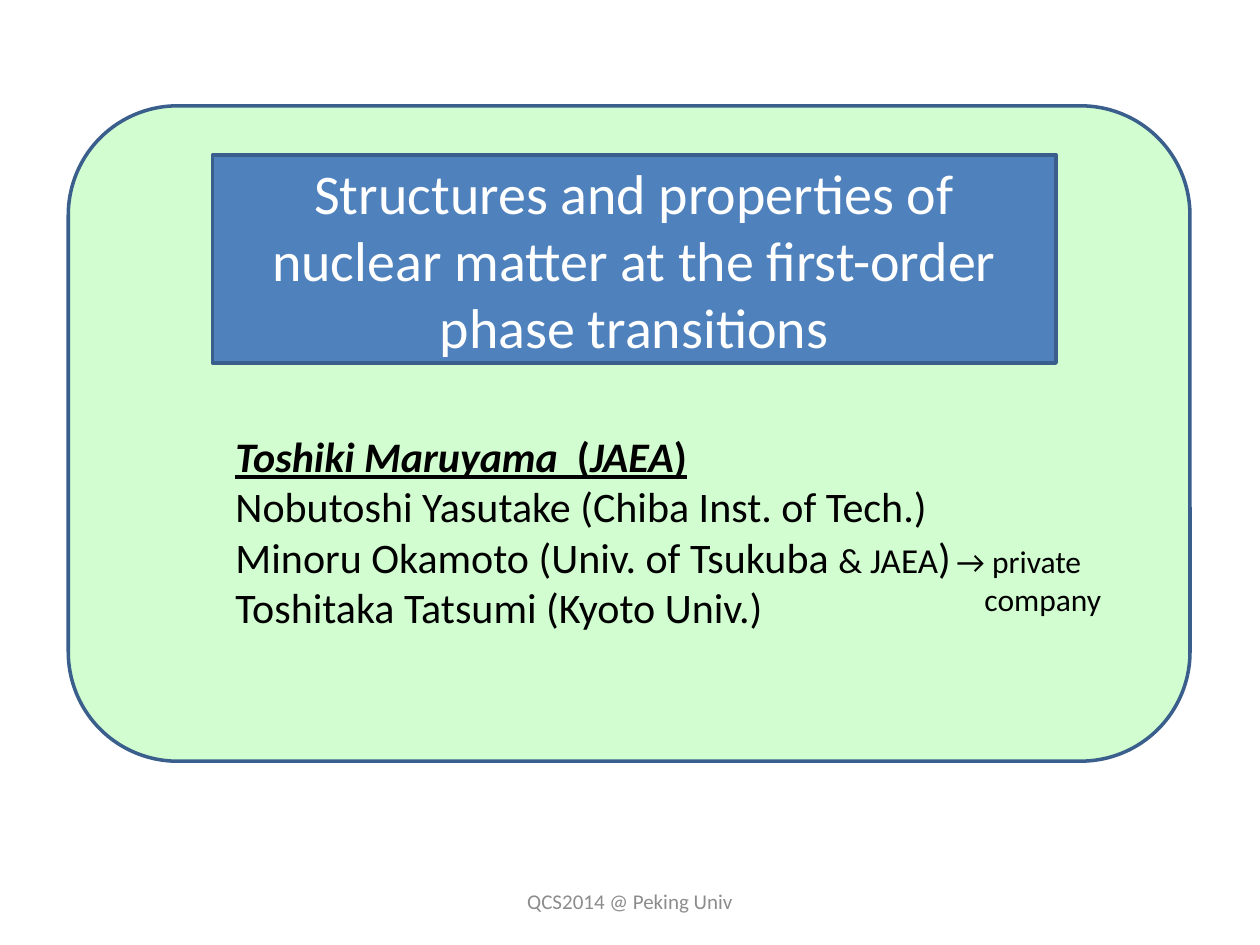
from dataclasses import dataclass
from lxml import etree
from pptx import Presentation
from pptx.dml.color import RGBColor
from pptx.enum import shapes, text
from pptx.oxml import ns
from pptx.util import Pt

COLORS = {"panel": "21F616", "outline": "3A5F8C", "title": "4F81BD",
          "white": "FFFFFF", "black": "000000", "footer": "8C8C8C"}
FONT = "Calibri"


@dataclass
class Box:
    left: float
    top: float
    width: float
    height: float

    def lengths(self) -> list:
        return [Pt(n) for n in (self.left, self.top, self.width, self.height)]


@dataclass
class Run:
    words: str
    size: float | None = None
    italic: bool | None = None


@dataclass
class Line:
    runs: list[Run]
    indent: float = 0
    lead: bool = False


def paint(shape, fill: str) -> None:
    shape.fill.solid()
    shape.fill.fore_color.rgb = RGBColor.from_string(COLORS[fill])
    shape.line.color.rgb = RGBColor.from_string(COLORS["outline"])
    shape.line.width = Pt(2)


def format_font(font, size: float, color: str) -> None:
    font.name, font.size = FONT, Pt(size)
    font.color.rgb = RGBColor.from_string(COLORS[color])


def add_lines(slide, box: Box, lines: list[Line], size: float, color: str = "black",
              wrap: bool = False, align=text.PP_ALIGN.LEFT, anchor=text.MSO_ANCHOR.TOP) -> None:
    frame = slide.shapes.add_textbox(*box.lengths()).text_frame
    frame.word_wrap, frame.vertical_anchor = wrap, anchor
    for index, line in enumerate(lines):
        paragraph = frame.add_paragraph() if index else frame.paragraphs[0]
        paragraph.alignment = align
        format_font(paragraph.font, size, color)
        if line.indent:
            paragraph._p.get_or_add_pPr().set("marL", str(Pt(line.indent)))
        for part in line.runs:
            run = paragraph.add_run()
            run.text = part.words
            format_font(run.font, part.size or size, color)
            run.font.italic = part.italic
            if line.lead:
                run.font.bold = run.font.underline = True


def add_panel(slide, box: Box) -> None:
    panel = slide.shapes.add_shape(shapes.MSO_SHAPE.ROUNDED_RECTANGLE, *box.lengths())
    panel.shadow.inherit = False
    paint(panel, "panel")
    color = panel._element.spPr.find(".//" + ns.qn("a:srgbClr"))
    etree.SubElement(color, ns.qn("a:alpha"), val="20000")


def format_title(slide, box: Box, words: str) -> None:
    title = slide.shapes.title
    title.left, title.top, title.width, title.height = box.lengths()
    # Rounded outline for the placeholder
    geometry = etree.SubElement(title._element.spPr, ns.qn("a:prstGeom"), prst="roundRect")
    etree.SubElement(geometry, ns.qn("a:avLst"))
    paint(title, "title")
    frame = title.text_frame
    frame.text = words
    frame.auto_size = text.MSO_AUTO_SIZE.NONE
    frame.word_wrap, frame.vertical_anchor = True, text.MSO_ANCHOR.MIDDLE
    frame.paragraphs[0].alignment = text.PP_ALIGN.CENTER
    format_font(frame.paragraphs[0].font, 32, "white")
    # Bring the title in front of the panel
    slide.shapes._spTree.append(title._element)


def main() -> None:
    presentation = Presentation()
    presentation.slide_width, presentation.slide_height = Pt(720), Pt(540)
    slide = presentation.slides.add_slide(presentation.slide_layouts[5])

    # Panel and title
    add_panel(slide, Box(39, 60.5, 641, 374.5))
    format_title(slide, Box(121.5, 88.5, 482, 119),
                 "Structures and properties of nuclear matter at the first-order phase transitions")

    # Authors
    add_lines(slide, Box(127.5, 242.5, 432, 123), [
        Line([Run("Toshiki Maruyama  ", italic=True), Run("("),
              Run("JAEA", italic=True), Run(")")], lead=True),
        Line([Run("Nobutoshi Yasutake (Chiba Inst. of Tech.)")]),
        Line([Run("Minoru Okamoto (Univ. of Tsukuba "), Run("& JAEA", size=20), Run(")")]),
        Line([Run("Toshitaka Tatsumi (Kyoto Univ.)")]),
    ], size=24)

    # Footer
    add_lines(slide, Box(246, 500.5, 228, 29), [Line([Run("QCS2014 @ Peking Univ")])],
              size=12, color="footer", wrap=True,
              align=text.PP_ALIGN.CENTER, anchor=text.MSO_ANCHOR.MIDDLE)

    # Note beside the third author
    add_lines(slide, Box(535.5, 306, 103, 51), [
        Line([Run("→ private")], indent=4),
        Line([Run("company")], indent=20),
    ], size=18)

    presentation.save("out.pptx")


if __name__ == "__main__":
    main()
